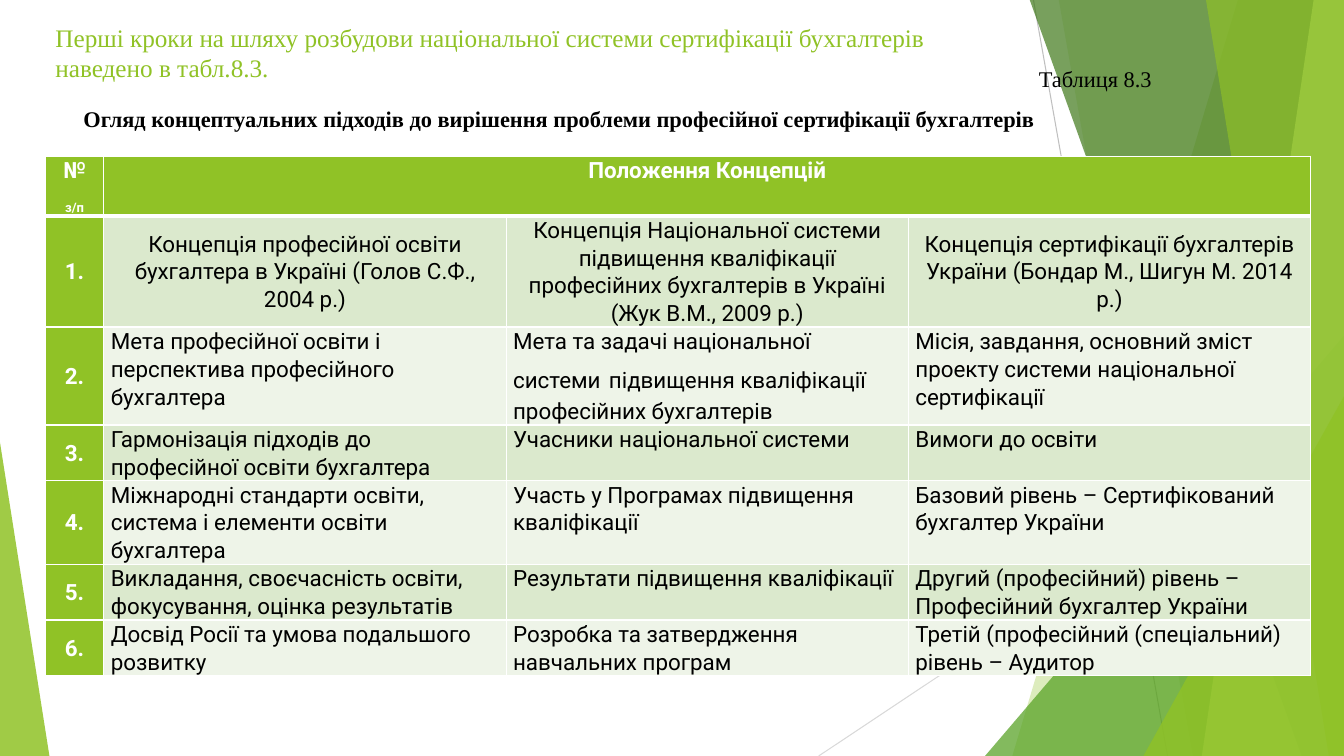
"""Build a slide with a table of approaches to accountant certification."""
from dataclasses import dataclass
from lxml import etree
from pptx import Presentation
from pptx import util as u
from pptx.dml.color import RGBColor
from pptx.enum import shapes, text
from pptx.oxml.ns import qn

INCH = u.Inches
CENTER, LEFT, RIGHT = text.PP_ALIGN.CENTER, text.PP_ALIGN.LEFT, text.PP_ALIGN.RIGHT
TOP, MIDDLE = text.MSO_ANCHOR.TOP, text.MSO_ANCHOR.MIDDLE


def rgb(value):
    return RGBColor.from_string(value)


def write(paragraph, content, size=16, color="000000", bold=False,
          font="Times New Roman", align=LEFT, spacing=None, baseline=0):
    paragraph.alignment = align
    if spacing:
        paragraph.line_spacing = spacing
    run = paragraph.add_run()
    run.text = content
    run.font.size, run.font.bold, run.font.name = u.Pt(size), bold, font
    run.font.color.rgb = rgb(color)
    if baseline:
        run.font._element.set("baseline", str(baseline * 1000))


@dataclass
class CertificationSlide:
    slide: object
    accent: str = "90C226"
    bands: tuple = ("DBE9CD", "EEF4E8")
    body_font: str = "Roboto"

    def line(self, start, end, color):
        ray = self.slide.shapes.add_connector(
            shapes.MSO_CONNECTOR.STRAIGHT, *map(INCH, start + end))
        ray.line.color.rgb, ray.line.width = rgb(color), u.Pt(0.75)
        etree.SubElement(ray._element.spPr, qn("a:effectLst"))

    def paint(self, shape, color, opacity):
        shape.shadow.inherit = False
        shape.fill.solid()
        shape.fill.fore_color.rgb = rgb(color)
        shape.line.fill.background()
        tint = shape._element.spPr.find(qn("a:solidFill"))[0]
        etree.SubElement(tint, qn("a:alpha"), val=str(opacity * 1000))

    def facet(self, top_left, bottom_left, color, opacity):
        builder = self.slide.shapes.build_freeform(INCH(top_left), INCH(-0.01))
        corners = [(13.33, -0.01), (13.33, 7.5), (bottom_left, 7.5)]
        builder.add_line_segments([(INCH(x), INCH(y)) for x, y in corners])
        self.paint(builder.convert_to_shape(), color, opacity)

    def triangle(self, box, apex, color, opacity):
        corner = self.slide.shapes.add_shape(
            shapes.MSO_SHAPE.ISOSCELES_TRIANGLE, *map(INCH, box))
        corner.adjustments[0] = apex
        self.paint(corner, color, opacity)

    def title(self, content):
        heading = self.slide.shapes.title
        heading.left, heading.top, heading.width, heading.height = map(
            INCH, (0.45, 0.17, 9.4, 1.44))
        frame = heading.text_frame
        frame.vertical_anchor, frame.word_wrap = TOP, True
        frame.auto_size = text.MSO_AUTO_SIZE.NONE
        write(frame.paragraphs[0], content, size=18, color=self.accent)
        self.slide.shapes.element.append(heading.element)

    def caption(self, box, number, name):
        frame = self.slide.shapes.add_textbox(*map(INCH, box)).text_frame
        frame.word_wrap = True
        frame.auto_size = text.MSO_AUTO_SIZE.SHAPE_TO_FIT_TEXT
        write(frame.paragraphs[0], number, align=RIGHT, spacing=1.5)
        write(frame.add_paragraph(), name, bold=True, align=CENTER, spacing=1.5)

    def cell(self, cell, fill, runs, anchor=TOP, bottom=1, **style):
        cell.margin_left = cell.margin_right = INCH(0.07)
        cell.margin_top = cell.margin_bottom = 0
        cell.vertical_anchor = anchor
        paragraph = cell.text_frame.paragraphs[0]
        for content, size in runs:
            write(paragraph, content, size=size, font=self.body_font, spacing=1.07, **style)
        properties = cell._tc.get_or_add_tcPr()
        for side, width in (("L", 1), ("R", 1), ("T", 1), ("B", bottom)):
            border = etree.SubElement(properties, qn(f"a:ln{side}"), w=str(u.Pt(width)))
            solid = etree.SubElement(border, qn("a:solidFill"))
            etree.SubElement(solid, qn("a:srgbClr"), val="FFFFFF")
        cell.fill.solid()
        cell.fill.fore_color.rgb = rgb(fill)

    def table(self, corner, widths, heights, heading, rows):
        grid = self.slide.shapes.add_table(
            len(heights), len(widths), *map(INCH, corner + (sum(widths), sum(heights)))).table
        for column, width in zip(grid.columns, widths):
            column.width = INCH(width)
        for row, height in zip(grid.rows, heights):
            row.height = INCH(height)
        label = dict(color="FFFFFF", bold=True, align=CENTER)
        for column, content in enumerate(("№", heading, "", "")):
            runs = [(content, 16)] if content else []
            self.cell(grid.cell(0, column), self.accent, runs, bottom=3, **label)
        write(grid.cell(0, 0).text_frame.add_paragraph(), "з/п", font=self.body_font,
              spacing=1.07, baseline=-25, **label)
        grid.cell(0, 1).merge(grid.cell(0, 3))
        for number, entries in enumerate(rows, 1):
            self.cell(grid.cell(number, 0), self.accent, [(f"{number}.", 16)], MIDDLE, **label)
            align, anchor = (CENTER, MIDDLE) if number == 1 else (LEFT, TOP)
            for column, entry in enumerate(entries, 1):
                runs = [(entry, 16)] if isinstance(entry, str) else entry
                self.cell(grid.cell(number, column), self.bands[(number - 1) % 2],
                          runs, anchor, align=align)


APPROACHES = [
    ("Концепція професійної освіти бухгалтера в Україні (Голов С.Ф., 2004 р.)",
     "Концепція Національної системи підвищення кваліфікації професійних бухгалтерів "
     "в Україні (Жук В.М., 2009 р.)",
     "Концепція сертифікації бухгалтерів України (Бондар М., Шигун М. 2014 р.)"),
    ("Мета професійної освіти і перспектива професійного бухгалтера",
     [("Мета та задачі національної системи", 16), (" ", 24),
      ("підвищення кваліфікації професійних бухгалтерів", 16)],
     "Місія, завдання, основний зміст проекту системи національної сертифікації"),
    ("Гармонізація підходів до професійної освіти бухгалтера",
     "Учасники національної системи",
     "Вимоги до освіти"),
    ("Міжнародні стандарти освіти, система і елементи освіти бухгалтера",
     "Участь у Програмах підвищення кваліфікації",
     "Базовий рівень – Сертифікований бухгалтер України"),
    ("Викладання, своєчасність освіти, фокусування, оцінка результатів",
     "Результати підвищення кваліфікації",
     "Другий (професійний) рівень – Професійний бухгалтер України"),
    ("Досвід Росії та умова подальшого розвитку",
     "Розробка та затвердження навчальних програм",
     "Третій (професійний (спеціальний) рівень – Аудитор"),
]


def main():
    deck = Presentation()
    deck.slide_width, deck.slide_height = INCH(13.33), INCH(7.5)
    page = CertificationSlide(deck.slides.add_slide(deck.slide_layouts[5]))

    page.line((10.25, 0), (11.58, 7.5), "BFBFBF")
    page.line((13.33, 4.03), (8.12, 7.5), "D9D9D9")
    page.facet(12.28, 10.04, page.accent, 30)
    page.facet(10.5, 11.83, page.accent, 20)
    page.triangle((9.77, 3.33, 3.56, 4.17), 1, "54A021", 72)
    page.facet(10.21, 12.91, "3F7819", 70)
    page.facet(13.03, 11.92, "C0E474", 70)
    page.facet(11.96, 13.18, page.accent, 65)
    page.triangle((11.34, 3.93, 1.99, 3.57), 1, page.accent, 80)
    page.triangle((0, 4.39, 0.49, 3.11), 0, page.accent, 85)

    page.title("Перші кроки на шляху розбудови національної системи сертифікації "
               "бухгалтерів наведено в табл.8.3.")
    page.table((0.45, 1.55), (0.58, 3.99, 3.99, 3.99),
               (0.59, 1.1, 0.97, 0.55, 0.83, 0.55, 0.55), "Положення Концепцій", APPROACHES)
    page.caption((-0.43, 0.46, 11.95, 0.86), "Таблиця 8.3",
                 "Огляд концептуальних підходів до вирішення проблеми "
                 "професійної сертифікації бухгалтерів")
    deck.save("out.pptx")


if __name__ == "__main__":
    main()
